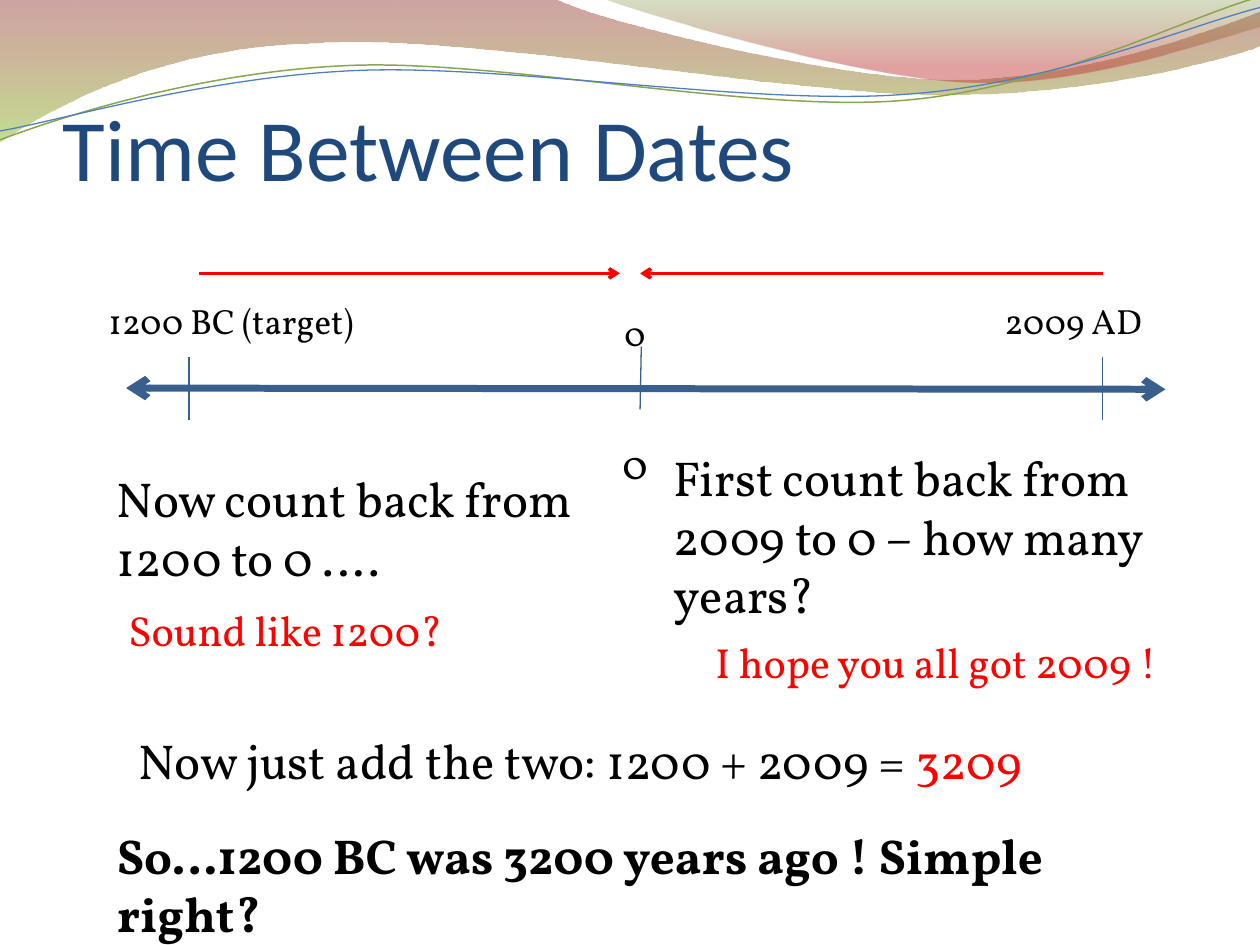
from dataclasses import dataclass
from math import cos, radians, sin

from pptx import Presentation
from pptx.dml.color import RGBColor
from pptx.enum.shapes import MSO_CONNECTOR as Connector
from pptx.enum.text import MSO_ANCHOR as Anchor, MSO_AUTO_SIZE as AutoSize, PP_ALIGN as Align
from pptx.oxml.ns import qn
from pptx.util import Emu, Pt
from lxml.etree import SubElement

PX = 9144  # 100 px to the inch


@dataclass(frozen=True)
class Theme:
    title: str = "1F497D"
    text: str = "000000"
    accent: str = "FF0000"
    axis: str = "395F8D"
    wave_green: str = "89A54F"
    wave_blue: str = "4F81BD"
    title_font: str = "Calibri"
    body_font: str = "Vollkorn"
    title_size: int = 50
    body_size: int = 28
    answer_size: int = 24
    label_size: int = 20


THEME = Theme()


def px(value):
    return Emu(round(value * PX))


def rgb(color):
    return RGBColor.from_string(color)


def add_text(slide, box, runs, size, font=THEME.body_font, align=Align.LEFT, bold=False):
    """Place one paragraph of (text, colour) runs."""
    shape = slide.shapes.add_textbox(*map(px, box))
    frame = shape.text_frame
    frame.word_wrap = True
    frame.auto_size = AutoSize.SHAPE_TO_FIT_TEXT
    paragraph = frame.paragraphs[0]
    paragraph.alignment = align
    for text, color in runs:
        run = paragraph.add_run()
        run.text = text
        run.font.name = font
        run.font.size = Pt(size)
        run.font.bold = bold
        run.font.color.rgb = rgb(color)
    return frame


def add_line(slide, start, end, color, width, arrows=()):
    """Draw a line; arrows names the ends to point: headEnd, tailEnd."""
    line = slide.shapes.add_connector(Connector.STRAIGHT, *map(px, (*start, *end)))
    line.line.color.rgb = rgb(color)
    line.line.width = Pt(width)
    properties = line.element.spPr
    for arrow in arrows:
        SubElement(properties.find(qn("a:ln")), qn(f"a:{arrow}"), type="arrow")
    SubElement(properties, qn("a:effectLst"))


def turn(points, center, degrees):
    """Rotate points clockwise about a center."""
    (cx, cy), c, s = center, cos(radians(degrees)), sin(radians(degrees))
    return [(cx + (x - cx) * c - (y - cy) * s, cy + (x - cx) * s + (y - cy) * c)
            for x, y in points]


def add_outline(slide, origin, start, segments, closed):
    """Join segments: one point makes a straight line, three a cubic curve."""
    left, top = origin

    def place(point):
        return px(left + point[0]), px(top + point[1])

    builder = slide.shapes.build_freeform(*place(start), scale=1.0)
    builder.add_line_segments([place(segment[-1]) for segment in segments], close=closed)
    shape = builder.convert_to_shape()
    shape.shadow.inherit = False
    # Bend the three-point segments
    for line, segment in zip(list(shape.element.iter(qn("a:lnTo"))), segments):
        if len(segment) == 3:
            outline = line.getparent()
            curve = SubElement(outline, qn("a:cubicBezTo"))
            outline.replace(line, curve)
            for x, y in map(place, segment):
                SubElement(curve, qn("a:pt"), x=str(x - shape.left), y=str(y - shape.top))
    return shape


def add_band(slide, origin, start, segments, stops):
    """Fill an outline with a downward gradient of (position, colour, opacity)."""
    shape = add_outline(slide, origin, start, segments, closed=True)
    shape.line.fill.background()
    shape.fill.gradient()
    shape.fill.gradient_angle = 270
    for gradient_stop, (position, color, _) in zip(shape.fill.gradient_stops, stops):
        gradient_stop.position = position
        gradient_stop.color.rgb = rgb(color)
    colors = shape.element.spPr.find(qn("a:gradFill")).iter(qn("a:srgbClr"))
    for color, (_, _, opacity) in zip(colors, stops):
        SubElement(color, qn("a:alpha"), val=str(opacity * 1000))


def add_wave(slide, origin, points, center, color, width):
    """Draw a thin curve, tilted by a shape rotation about its center."""
    tilt = 2.7
    start, *rest = turn(points, center, tilt)
    segments = [rest[i:i + 3] for i in range(0, len(rest), 3)]
    wave = add_outline(slide, origin, start, segments, closed=False)
    wave.rotation = 360 - tilt
    wave.fill.background()
    wave.line.color.rgb = rgb(color)
    wave.line.width = Pt(width)


def add_header_waves(slide, box):
    left, top, width, _ = box
    origin = (left, top)
    # Wide band
    add_band(slide, origin, (0, 0), [
        [(440, -1)],
        [(476, 17), (664, 63), (758, 63)],
        [(853, 63), (958, 26), (width, 9)],
        [(width + 1, 36)],
        [(983, 44), (870, 76), (746, 75)],
        [(622, 75), (382, 28), (257, 34)],
        [(129, 36), (46, 83), (-1, 113)],
        [(0, 0)],
    ], [(0, "973330", 45), (1, "95C238", 55)])
    # Right band
    add_band(slide, origin, (479, -1), [
        [(509, 11), (682, 62), (769, 65)],
        [(856, 69), (961, 32), (width, 21)],
        [(width, 0)],
        [(479, -1)],
    ], [(0, "769537", 30), (0.8, "BE3330", 45)])
    # Thin waves
    add_wave(slide, origin,
             [(0, 111), (48, 93), (158, 57), (277, 52), (395, 47), (593, 89), (713, 80),
              (833, 71), (938, 15), (998, -2)], (499, 57), THEME.wave_green, 0.85)
    add_wave(slide, origin,
             [(0, 104), (47, 96), (164, 61), (283, 56), (403, 51), (597, 84), (717, 75),
              (836, 67), (941, 21), (1000, 6)], (500, 58), THEME.wave_blue, 0.75)


def add_title(slide, box):
    frame = add_text(slide, box, [("Time Between Dates", THEME.title)],
                     THEME.title_size, THEME.title_font)
    frame.auto_size = AutoSize.NONE
    frame.vertical_anchor = Anchor.BOTTOM
    frame.margin_left = frame.margin_right = frame.margin_bottom = 0
    frame.margin_top = px(5)


def add_timeline(slide, box):
    left, top, width, _ = box
    axis_y = top + 91
    add_line(slide, (left, axis_y), (left + width, axis_y + 1), THEME.axis, 4,
             ("headEnd", "tailEnd"))
    # Ticks: target, zero, today
    target, zero, today = left + 50, left + 408, left + 775
    for x, tick_top, lean in ((target, 66, 0), (zero, 58, 1), (today, 66, 0)):
        add_line(slide, (x + lean, top + tick_top), (x, top + tick_top + 50), THEME.axis, 0.75)
    # Counting arrows towards zero
    for start, end in ((target + 8, zero - 16), (today, zero)):
        add_line(slide, (start, top), (end, top), THEME.accent, 2, ("tailEnd",))
    # Date labels
    for text, x, y, label_width, label_height, size in (
            ("1200 BC (target)", -75, 16, 317, 44, THEME.label_size),
            ("0", 375, 25, 58, 44, THEME.label_size),
            ("2009 AD ", 642, 16, 225, 44, THEME.label_size),
            ("0", 375, 125, 58, 50, THEME.answer_size)):
        add_text(slide, (left + x, top + y, label_width, label_height),
                 [(text, THEME.text)], size, align=Align.CENTER)


def add_step(slide, box, question, answer, answer_offset):
    left, top, _, _ = box
    add_text(slide, box, [(question, THEME.text)], THEME.body_size)
    x, y = answer_offset
    add_text(slide, (left + x, top + y, 375, 50), [(answer, THEME.accent)], THEME.answer_size)


def add_conclusion(slide, box):
    left, top, width, _ = box
    add_text(slide, (left + 17, top, width, 57),
             [("Now just add the two: 1200 + 2009 = ", THEME.text), ("3209", THEME.accent)],
             THEME.body_size)
    add_text(slide, (left, top + 75, width, 57),
             [("So…1200 BC was 3200 years ago ! Simple right?", THEME.text)],
             THEME.body_size, bold=True)


def main():
    presentation = Presentation()
    presentation.slide_width, presentation.slide_height = px(1000), px(750)
    slide = presentation.slides.add_slide(presentation.slide_layouts[6])
    add_header_waves(slide, (0, 0, 1000, 113))
    add_title(slide, (50, 33, 900, 125))
    add_timeline(slide, (100, 217, 825, 175))
    add_step(slide, (525, 350, 408, 151), "First count back from 2009 to 0 – how many years?",
             "I hope you all got 2009 !", (33, 150))
    add_step(slide, (83, 367, 408, 104), "Now count back from 1200 to 0 ….",
             "Sound like 1200?", (9, 108))
    add_conclusion(slide, (83, 575, 850, 132))
    presentation.save("out.pptx")


if __name__ == "__main__":
    main()
